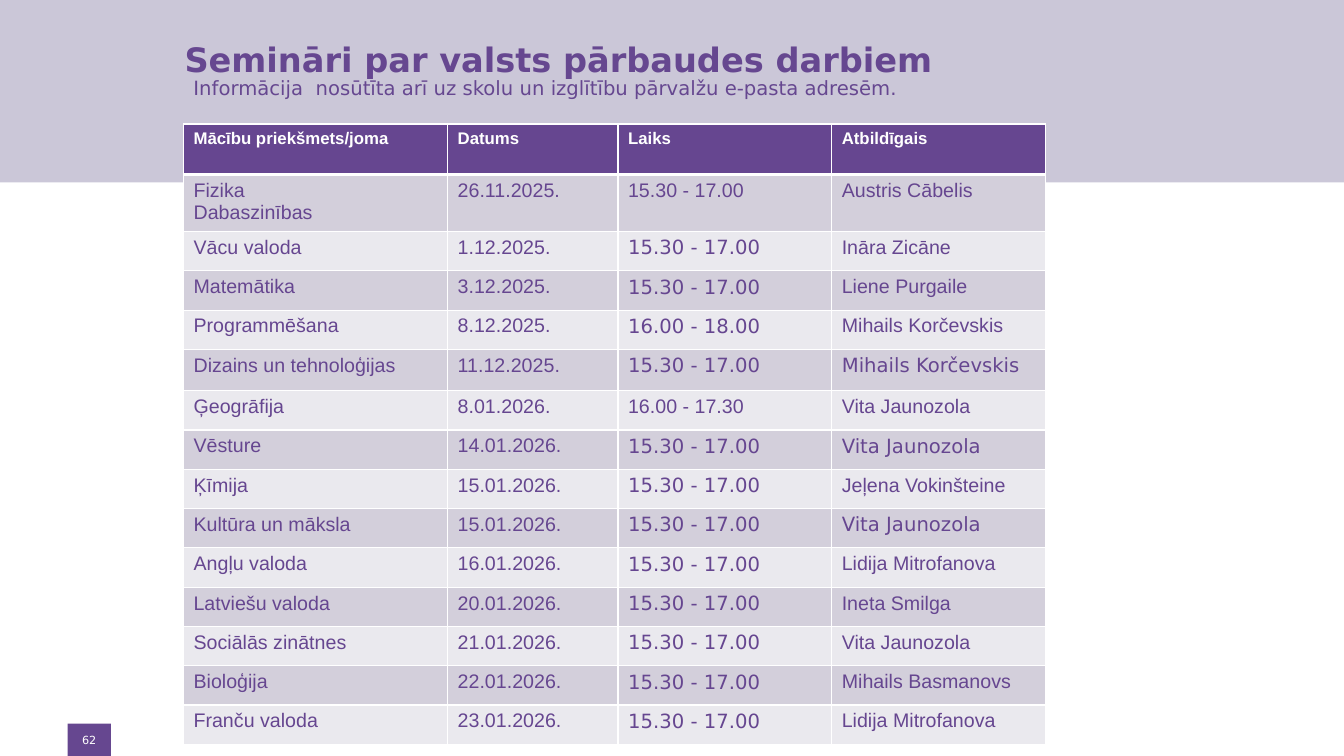
from lxml import etree
from pptx import Presentation
from pptx.dml.color import RGBColor
from pptx.enum.shapes import MSO_SHAPE
from pptx.enum.text import MSO_ANCHOR, PP_ALIGN
from pptx.oxml.ns import qn
from pptx.util import Inches, Pt

RECTANGLE = MSO_SHAPE.RECTANGLE
TOP, MIDDLE = MSO_ANCHOR.TOP, MSO_ANCHOR.MIDDLE
LEFT, CENTER = PP_ALIGN.LEFT, PP_ALIGN.CENTER

PURPLE = RGBColor(0x66, 0x47, 0x90)
TABLE_PURPLE = RGBColor(0x66, 0x46, 0x90)
LAVENDER = RGBColor(0xCB, 0xC7, 0xD8)
BAND_DARK = RGBColor(0xD3, 0xCF, 0xDB)
BAND_LIGHT = RGBColor(0xEA, 0xE9, 0xEE)
WHITE = RGBColor(0xFF, 0xFF, 0xFF)

ARIAL, DEJAVU = "Arial", "DejaVu Sans"
HEADER_FORMAT = {"name": ARIAL, "size": Pt(12), "bold": True}
BODY_FORMAT = {"size": Pt(14), "bold": False}

COLUMN_WIDTHS = [2.62, 1.69, 2.12, 2.12]
HEADER_HEIGHT, ROW_HEIGHT = 0.5, 0.39
TALL_ROWS = {1: 0.55, 5: 0.41}
ARIAL_TIME_ROWS = {1, 6}
DEJAVU_NAME_ROWS = {5, 7, 9}

SEMINARS = [
    ("Mācību priekšmets/joma", "Datums", "Laiks", "Atbildīgais"),
    ("Fizika\nDabaszinības", "26.11.2025.", "15.30 - 17.00", "Austris Cābelis"),
    ("Vācu valoda", "1.12.2025.", "15.30 - 17.00", "Ināra Zicāne"),
    ("Matemātika", "3.12.2025.", "15.30 - 17.00", "Liene Purgaile"),
    ("Programmēšana", "8.12.2025.", "16.00 - 18.00", "Mihails Korčevskis"),
    ("Dizains un tehnoloģijas", "11.12.2025.", "15.30 - 17.00", "Mihails Korčevskis"),
    ("Ģeogrāfija", "8.01.2026.", "16.00 - 17.30", "Vita Jaunozola"),
    ("Vēsture", "14.01.2026.", "15.30 - 17.00", "Vita Jaunozola"),
    ("Ķīmija", "15.01.2026.", "15.30 - 17.00", "Jeļena Vokinšteine"),
    ("Kultūra un māksla", "15.01.2026.", "15.30 - 17.00", "Vita Jaunozola"),
    ("Angļu valoda", "16.01.2026.", "15.30 - 17.00", "Lidija Mitrofanova"),
    ("Latviešu valoda", "20.01.2026.", "15.30 - 17.00", "Ineta Smilga"),
    ("Sociālās zinātnes", "21.01.2026.", "15.30 - 17.00", "Vita Jaunozola"),
    ("Bioloģija", "22.01.2026.", "15.30 - 17.00", "Mihails Basmanovs"),
    ("Franču valoda", "23.01.2026.", "15.30 - 17.00", "Lidija Mitrofanova"),
]


def body_font(row, column):
    if column == 2:
        return ARIAL if row in ARIAL_TIME_ROWS else DEJAVU
    if column == 3 and row in DEJAVU_NAME_ROWS:
        return DEJAVU
    return ARIAL


class SeminarPage:
    def __init__(self, page):
        self.page = page

    def fill_text(self, frame, text, color, font_format, align=LEFT):
        frame.text = text
        for para in frame.paragraphs:
            para.alignment = align
            for span in para.runs:
                span.font.color.rgb = color
                for name, value in font_format.items():
                    setattr(span.font, name, value)

    def rectangle(self, place, color):
        box = self.page.shapes.add_shape(RECTANGLE, *map(Inches, place))
        box.shadow.inherit = False
        box.fill.solid()
        box.fill.fore_color.rgb = color
        box.line.fill.background()

    def text(self, place, text, color, font_format,
             insets=(0.1, 0.05, 0.1, 0.05), anchor=TOP, align=LEFT):
        box = self.page.shapes.add_textbox(*map(Inches, place))
        frame = box.text_frame
        frame.word_wrap = True
        frame.vertical_anchor = anchor
        for side, inset in zip(("left", "top", "right", "bottom"), insets):
            setattr(frame, f"margin_{side}", Inches(inset))
        self.fill_text(frame, text, color, font_format, align)

    def borders(self, cell, widths):
        """Draw white cell edges; widths maps L, R, T and B to points."""
        properties = cell._tc.get_or_add_tcPr()
        for position, (side, width) in enumerate(widths.items()):
            line = etree.Element(qn(f"a:ln{side}"), w=str(Pt(width)))
            fill = etree.SubElement(line, qn("a:solidFill"))
            etree.SubElement(fill, qn("a:srgbClr"), val=str(WHITE))
            properties.insert(position, line)

    def table(self, left, top, rows):
        heights = [HEADER_HEIGHT] + [
            TALL_ROWS.get(row, ROW_HEIGHT) for row in range(1, len(rows))]
        table = self.page.shapes.add_table(
            len(rows), len(COLUMN_WIDTHS), Inches(left), Inches(top),
            Inches(sum(COLUMN_WIDTHS)), Inches(sum(heights))).table
        for column, width in zip(table.columns, COLUMN_WIDTHS):
            column.width = Inches(width)
        for row, (texts, height) in enumerate(zip(rows, heights)):
            table.rows[row].height = Inches(height)
            for column, text in enumerate(texts):
                cell = table.cell(row, column)
                if row == 0:
                    fill, color, font_format = TABLE_PURPLE, WHITE, HEADER_FORMAT
                else:
                    fill = BAND_DARK if row % 2 else BAND_LIGHT
                    color = TABLE_PURPLE
                    font_format = {**BODY_FORMAT, "name": body_font(row, column)}
                cell.fill.solid()
                cell.fill.fore_color.rgb = fill
                self.fill_text(cell.text_frame, text, color, font_format)
                self.borders(cell, {"L": 1, "R": 1, "T": 3 if row == 1 else 1,
                                    "B": 3 if row == 0 else 1})


def main():
    deck = Presentation()
    deck.slide_width, deck.slide_height = Inches(13.33), Inches(7.5)
    page = SeminarPage(deck.slides.add_slide(deck.slide_layouts[6]))

    number_place = (0.67, 7.18, 0.43, 0.32)
    page.rectangle(number_place, PURPLE)
    page.rectangle((0, 0, 13.33, 1.81), LAVENDER)
    page.text(number_place, "62", WHITE, {"name": DEJAVU, "size": Pt(8)},
              insets=(0.04,) * 4, anchor=MIDDLE, align=CENTER)
    page.table(1.82, 1.23, SEMINARS)
    page.text((1.82, 0.7, 8.64, 0.57),
              "Informācija  nosūtīta arī uz skolu un izglītību pārvalžu e-pasta adresēm.",
              PURPLE, {"name": DEJAVU, "size": Pt(14)})
    page.text((1.83, 0.32, 10.19, 0.54), "Semināri par valsts pārbaudes darbiem",
              PURPLE, {"name": DEJAVU, "size": Pt(24), "bold": True},
              insets=(0, 0.05, 0.1, 0.05), anchor=MIDDLE)
    deck.save("out.pptx")


if __name__ == "__main__":
    main()
